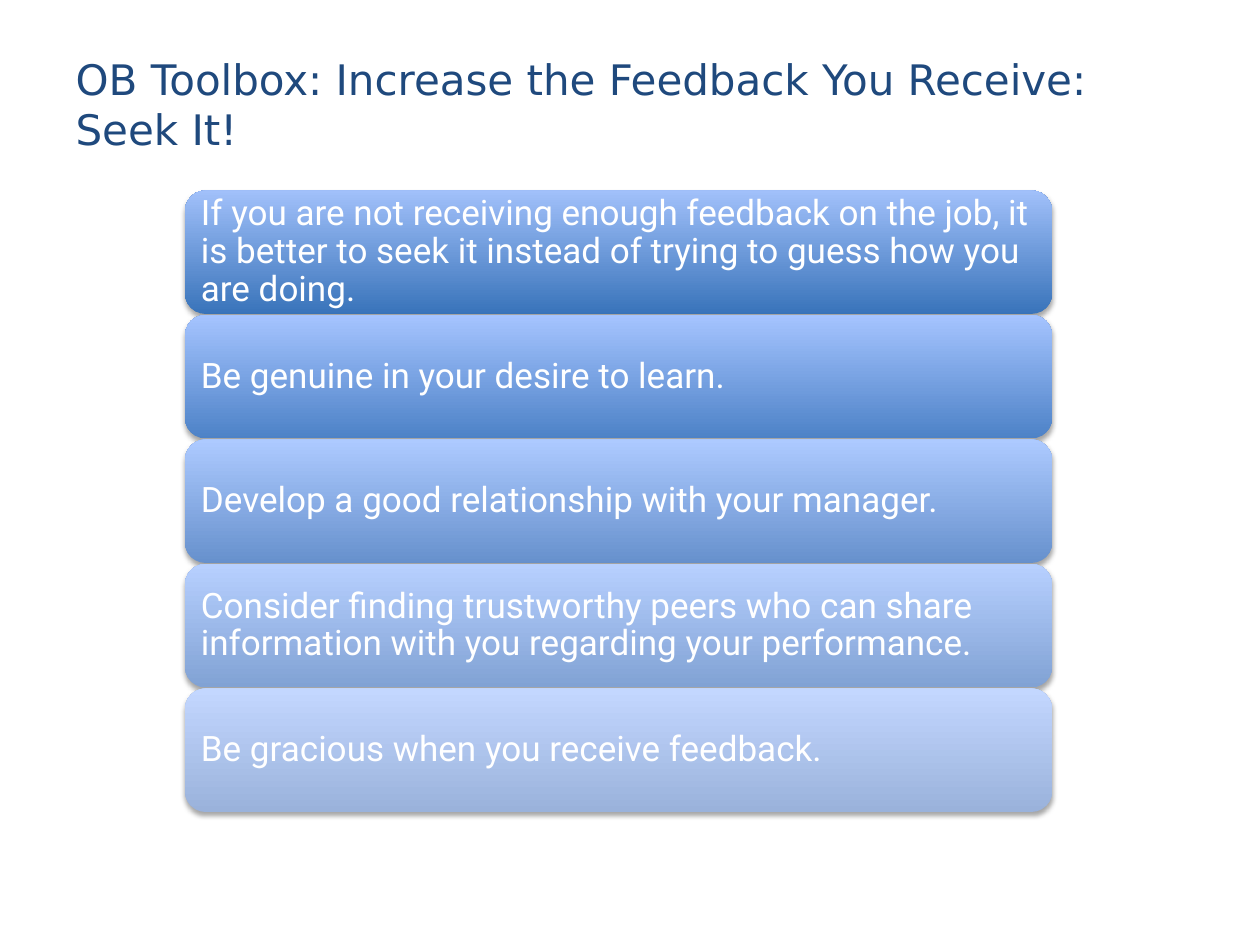
import dataclasses

import lxml.etree
import pptx
import pptx.dml.color
import pptx.enum.shapes
import pptx.enum.text
import pptx.oxml.ns
import pptx.util

Cm = pptx.util.Cm
Pt = pptx.util.Pt
Color = pptx.dml.color.RGBColor.from_string


@dataclasses.dataclass(frozen=True)
class Theme:
    title_font: str = "DejaVu Sans"
    title_size: int = 24
    title_color: str = "1F497D"
    body_font: str = "Roboto"
    body_size: int = 20
    body_color: str = "FFFFFF"
    shadow_color: str = "000000"
    # Bottom and top colour of each bar, fading down the list
    bar_gradients: tuple = (
        ("3974BA", "A1C0FA"),
        ("4D82C7", "A5C4FF"),
        ("6791CD", "ADCAFF"),
        ("81A2D4", "B7D0FF"),
        ("9AB2DB", "C3D7FF"),
    )


class SlideBuilder:
    def __init__(self, slide, theme):
        self.slide = slide
        self.theme = theme

    def style_text(self, frame, font, size, color):
        """Format the only paragraph of a frame, left-aligned and centred vertically."""
        frame.word_wrap = True
        frame.auto_size = pptx.enum.text.MSO_AUTO_SIZE.NONE
        frame.vertical_anchor = pptx.enum.text.MSO_ANCHOR.MIDDLE
        para = frame.paragraphs[0]
        para.alignment = pptx.enum.text.PP_ALIGN.LEFT
        for span in para.runs:
            span.font.name = font
            span.font.size = Pt(size)
            span.font.color.rgb = Color(color)

    def title(self, text, left, top, width, height):
        box = self.slide.shapes.title
        box.left, box.top, box.width, box.height = map(Cm, (left, top, width, height))
        box.text_frame.text = text
        theme = self.theme
        self.style_text(box.text_frame, theme.title_font, theme.title_size, theme.title_color)

    def bar(self, text, gradient, left, top, width, height):
        box = self.slide.shapes.add_shape(
            pptx.enum.shapes.MSO_SHAPE.ROUNDED_RECTANGLE,
            *map(Cm, (left, top, width, height)),
        )
        box.fill.gradient()
        box.fill.gradient_angle = 90
        for stop, color in zip(box.fill.gradient_stops, gradient):
            stop.color.rgb = Color(color)
        box.line.fill.background()
        self.drop_shadow(box)

        frame = box.text_frame
        frame.text = text
        frame.margin_left = frame.margin_right = Cm(0.2)
        frame.margin_top = frame.margin_bottom = Cm(0.2)
        frame.paragraphs[0].line_spacing = 0.9
        theme = self.theme
        self.style_text(frame, theme.body_font, theme.body_size, theme.body_color)

    def drop_shadow(self, box):
        """Soft shadow straight below the shape."""
        box.shadow.inherit = False
        qn = pptx.oxml.ns.qn
        effects = box.element.spPr.find(qn("a:effectLst"))
        shadow = lxml.etree.SubElement(
            effects, qn("a:outerShdw"), blurRad=str(Pt(3.1)), dist=str(Pt(1.8)),
            dir="5400000", rotWithShape="0",
        )
        color = lxml.etree.SubElement(shadow, qn("a:srgbClr"), val=self.theme.shadow_color)
        lxml.etree.SubElement(color, qn("a:alpha"), val="35000")


def main():
    deck = pptx.Presentation()
    deck.slide_width, deck.slide_height = Cm(25.4), Cm(19.05)
    theme = Theme()
    page = SlideBuilder(deck.slides.add_slide(deck.slide_layouts[5]), theme)

    # Title
    page.title("OB Toolbox: Increase the Feedback You Receive: Seek It!", 1.27, 0.51, 22.86, 3.17)

    # Stack of advice bars
    advice = (
        "If you are not receiving enough feedback on the job, it is better to seek it "
        "instead of trying to guess how you are doing.",
        "Be genuine in your desire to learn.",
        "Develop a good relationship with your manager.",
        "Consider finding trustworthy peers who can share information with you "
        "regarding your performance.",
        "Be gracious when you receive feedback.",
    )
    first_top, pitch = 3.84, 2.51
    for row, (text, gradient) in enumerate(zip(advice, theme.bar_gradients)):
        page.bar(text, gradient, 3.73, first_top + row * pitch, 17.48, 2.49)

    deck.save("out.pptx")


if __name__ == "__main__":
    main()
